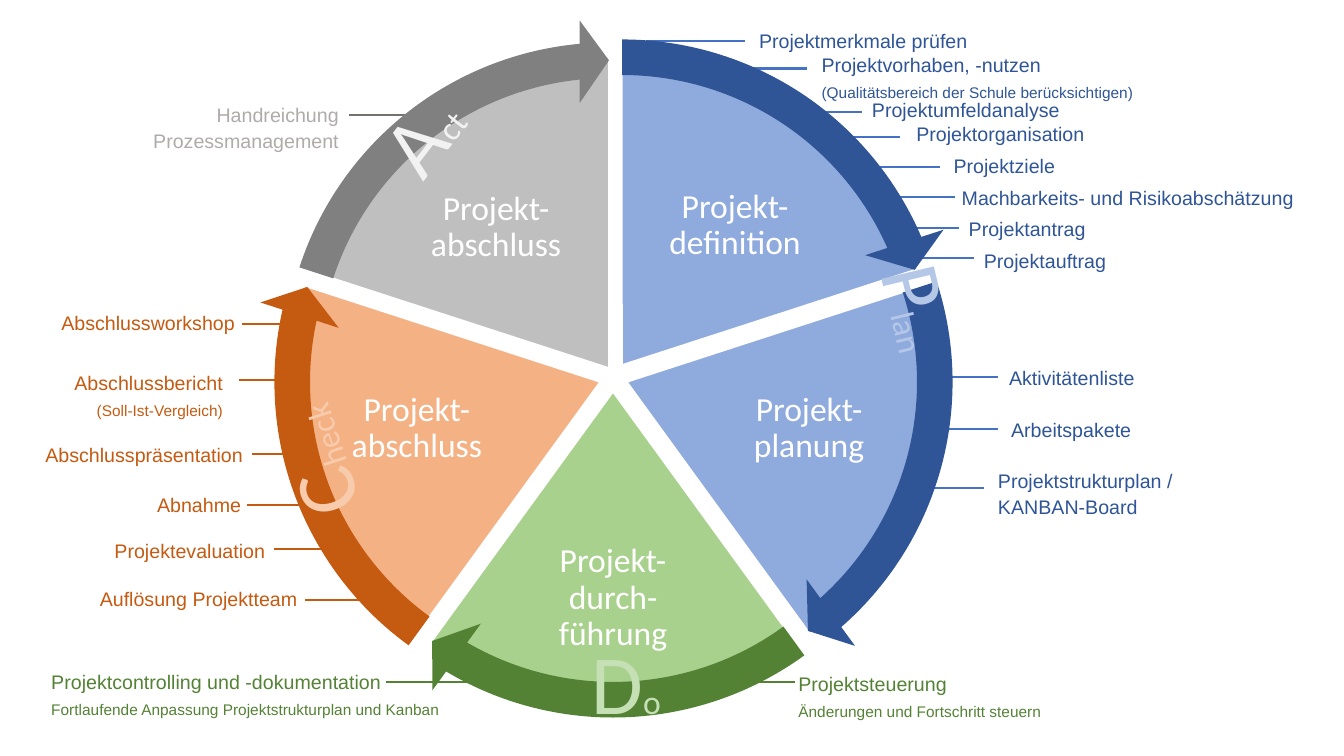
from lxml import etree
from pptx import Presentation
from pptx.dml.color import RGBColor
from pptx.enum.shapes import MSO_CONNECTOR, MSO_SHAPE
from pptx.enum.text import MSO_ANCHOR, MSO_AUTO_SIZE, PP_ALIGN
from pptx.oxml.ns import qn
from pptx.util import Inches, Pt

LEFT, RIGHT, MID = PP_ALIGN.LEFT, PP_ALIGN.RIGHT, PP_ALIGN.CENTER
GROW, MIDDLE = MSO_AUTO_SIZE.SHAPE_TO_FIT_TEXT, MSO_ANCHOR.MIDDLE
PIE, ARROW = MSO_SHAPE.PIE, MSO_SHAPE.CIRCULAR_ARROW
STRAIGHT = MSO_CONNECTOR.STRAIGHT

WHITE = RGBColor(0xFF, 0xFF, 0xFF)
NAVY = RGBColor(0x2F, 0x55, 0x97)
BLUE = RGBColor(0x44, 0x72, 0xC4)
SKY = RGBColor(0x8F, 0xAA, 0xDC)
PALE = RGBColor(0xB4, 0xC7, 0xE7)
GREEN = RGBColor(0x54, 0x82, 0x35)
LIME = RGBColor(0xA9, 0xD1, 0x8E)
MINT = RGBColor(0xC5, 0xE0, 0xB4)
RUST = RGBColor(0xC5, 0x5A, 0x11)
PEACH = RGBColor(0xF4, 0xB1, 0x83)
CREAM = RGBColor(0xF8, 0xCB, 0xAD)
GREY = RGBColor(0x80, 0x80, 0x80)
SILVER = RGBColor(0xBF, 0xBF, 0xBF)
SMOKE = RGBColor(0xF2, 0xF2, 0xF2)
ASH = RGBColor(0xAF, 0xAB, 0xAB)
SLATE = RGBColor(0x76, 0x71, 0x71)

# label colour, line colour, alignment,
# labels: (main line, small line, left, top, width),
# lines: (from x, to x, y)
NOTES = [
    (NAVY, BLUE, LEFT, [
        ("Projektmerkmale prüfen", "", 7.43, 0.22, 2.4),
        ("Projektvorhaben, -nutzen", "(Qualitätsbereich der Schule berücksichtigen)",
         8.05, 0.46, 3.92),
        ("Projektumfeldanalyse", "", 8.55, 0.91, 3.87),
        ("Projektorganisation", "", 8.99, 1.14, 3.87),
        ("Projektziele", "", 9.36, 1.46, 1.47),
        ("Machbarkeits- und Risikoabschätzung", "", 9.44, 1.78, 3.87),
        ("Projektantrag", "", 9.51, 2.09, 1.57),
        ("Projektauftrag", "", 9.66, 2.4, 1.57),
        ("Aktivitätenliste", "", 9.91, 3.56, 1.57),
        ("Arbeitspakete", "", 9.93, 4.08, 1.71),
        ("Projektstrukturplan / KANBAN-Board", "", 9.8, 4.59, 1.96),
    ], [
        (7.39, 6.41, 0.41), (8, 7.22, 0.68), (8.55, 7.77, 1.11),
        (8.93, 8.27, 1.36), (9.32, 8.66, 1.66), (9.47, 8.82, 1.95),
        (9.51, 8.86, 2.26), (9.66, 9.01, 2.56), (9.9, 9.44, 3.74),
        (9.9, 9.34, 4.26), (9.76, 9.23, 4.84),
    ]),
    (GREEN, GREEN, LEFT, [
        ("Projektsteuerung", "Änderungen und Fortschritt steuern", 7.82, 6.6, 5.26),
        ("Projektcontrolling und -dokumentation",
         "Fortlaufende Anpassung Projektstrukturplan und Kanban", 0.41, 6.58, 4.49),
    ], [(7.89, 7.05, 6.77), (4.68, 3.83, 6.77)]),
    (RUST, RUST, RIGHT, [
        ("Abschlussworkshop", "", 0.03, 3.02, 2.4),
        ("Abschlussbericht", "(Soll-Ist-Vergleich)", 0.26, 3.61, 2.05),
        ("Abschlusspräsentation", "", 0.11, 4.33, 2.4),
        ("Abnahme", "", 1.1, 4.82, 1.39),
        ("Projektevaluation", "", 0.33, 5.28, 2.4),
        ("Auflösung Projektteam", "", 0.65, 5.76, 2.4),
    ], [
        (2.83, 2.4, 3.21), (2.79, 2.37, 3.77), (2.86, 2.5, 4.5),
        (3, 2.45, 5.01), (3.27, 2.72, 5.45), (3.58, 3.03, 5.95),
    ]),
    (ASH, SLATE, RIGHT, [
        ("Handreichung Prozessmanagement", "", 1.18, 0.96, 2.28),
    ], [(4.02, 3.46, 1.14)]),
]

# name, pie left and top, text box, pie colour, arrow colour; clockwise from the top
PHASES = [
    ("Projekt-definition", 3.09, 0.54, (6.3, 1.58, 1.98, 1.32), SKY, NAVY),
    ("Projekt-planung", 3.14, 0.71, (7.11, 3.52, 1.83, 1.47), SKY, NAVY),
    ("Projekt-durch-führung", 3.0, 0.81, (5.2, 5.13, 1.76, 1.61), LIME, GREEN),
    ("Projekt-abschluss", 2.87, 0.71, (3.22, 3.52, 1.83, 1.47), PEACH, RUST),
    ("Projekt-abschluss", 2.96, 0.57, (3.93, 1.6, 1.98, 1.32), SILVER, GREY),
]

# initial, rest, box, turn, colour
CYCLE = [
    ("P", "lan", (8.62, 2.49, 1.05, 1.11), 76.6, PALE),
    ("D", "o", (5.76, 6.21, 0.9, 1.11), 0, MINT),
    ("C", "heck", (2.46, 4.04, 1.29, 1.11), 252, CREAM),
    ("A", "ct", (3.7, 0.76, 0.94, 1.11), 307.7, SMOKE),
]

DISC, RING = 6.16, 6.92
FULL = 216              # a full turn in adjustment units: 360 * 60000 / 100000
STEP = FULL / len(PHASES)
TOP = FULL * 3 / 4      # twelve o'clock
BAND, TIP, HEAD = 0.051, 3.27, 0.059


def add_text(home, box, paras, color, align, font, wrap=True, **frame):
    """Add a text box; each paragraph is a list of (text, size) runs."""
    shape = home.add_textbox(*map(Inches, box))
    tf = shape.text_frame
    tf.word_wrap = wrap
    for key, value in frame.items():
        setattr(tf, key, value)
    for i, runs in enumerate(paras):
        para = tf.paragraphs[0] if i == 0 else tf.add_paragraph()
        para.alignment = align
        for text, size in runs:
            run = para.add_run()
            run.text = text
            run.font.name, run.font.size = font, Pt(size)
            run.font.color.rgb = color
    return shape


def add_line(home, start, end, y, color):
    line = home.add_connector(STRAIGHT, *map(Inches, (start, y, end, y)))
    line.line.color.rgb, line.line.width = color, Pt(1.5)
    etree.SubElement(line._element.spPr, qn("a:effectLst"))


def add_arc(home, kind, left, top, size, fill, adjust):
    shape = home.add_shape(kind, *map(Inches, (left, top, size, size)))
    shape.shadow.inherit = False
    shape.fill.solid()
    shape.fill.fore_color.rgb = fill
    for i, value in enumerate(adjust):
        shape.adjustments[i] = value
    return shape


def main():
    prs = Presentation()
    prs.slide_width, prs.slide_height = Inches(13.33), Inches(7.5)
    shapes = prs.slides.add_slide(prs.slide_layouts[6]).shapes

    for color, stroke, align, labels, lines in NOTES:
        for start, end, y in lines:
            add_line(shapes, start, end, y, stroke)
        for main_text, small, left, top, width in labels:
            paras = [[(main_text, 14)]] + ([[(small, 11)]] if small else [])
            box = (left, top, width, 0.08 + 0.25 * len(paras))
            label = add_text(shapes, box, paras, color, align, "Arial", auto_size=GROW)
            for para in label.text_frame.paragraphs:
                para.line_spacing = Pt(18)

    wheel = shapes.add_group_shape().shapes
    inset = dict.fromkeys(
        ("margin_left", "margin_right", "margin_top", "margin_bottom"), Inches(0.03))
    for i, (name, left, top, box, fill, _) in enumerate(PHASES):
        angles = [(TOP + STEP * k) % FULL for k in (i, i + 1)]
        pie = add_arc(wheel, PIE, left, top, DISC, fill, angles)
        pie.line.color.rgb, pie.line.width = WHITE, Pt(1)
        text = add_text(wheel, box, [[(name, 24)]], WHITE, MID, "Calibri",
                        vertical_anchor=MIDDLE, **inset)
        text.text_frame.paragraphs[0].line_spacing = 0.9

    shift = (RING - DISC) / 2
    for i, (_, left, top, _, _, fill) in enumerate(PHASES):
        start, end = [(TOP + STEP * k) % FULL for k in (i, i + 1)]
        arrow = add_arc(wheel, ARROW, left - shift, top - shift, RING, fill,
                        (BAND, TIP, end - TIP, start, HEAD))
        arrow.line.fill.background()

    for first, rest, box, turn, color in CYCLE:
        word = add_text(shapes, box, [[(first, 60), (rest, 24)]], color, MID,
                        "Calibri", wrap=False, auto_size=GROW)
        word.rotation = turn

    prs.save("out.pptx")


if __name__ == "__main__":
    main()
